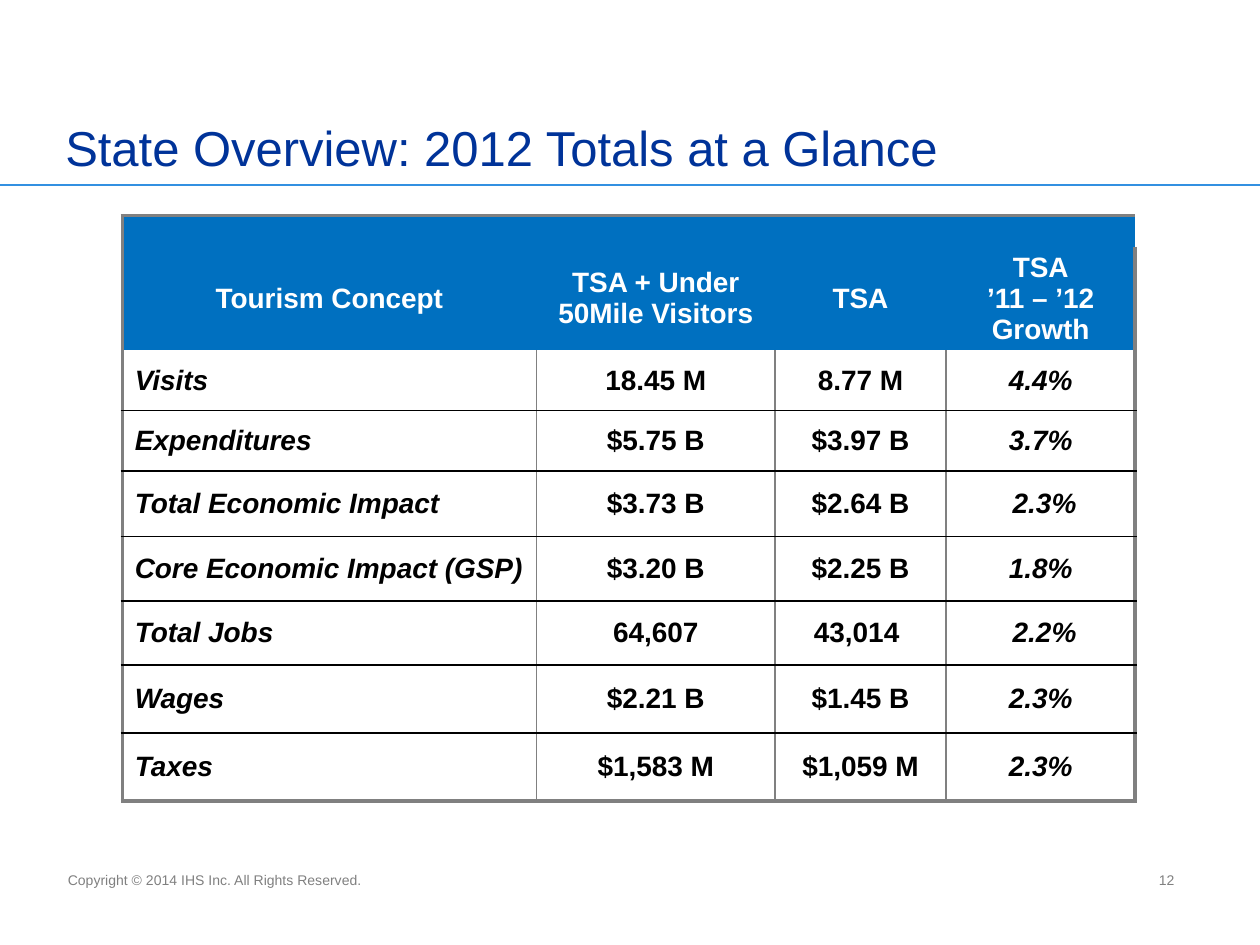
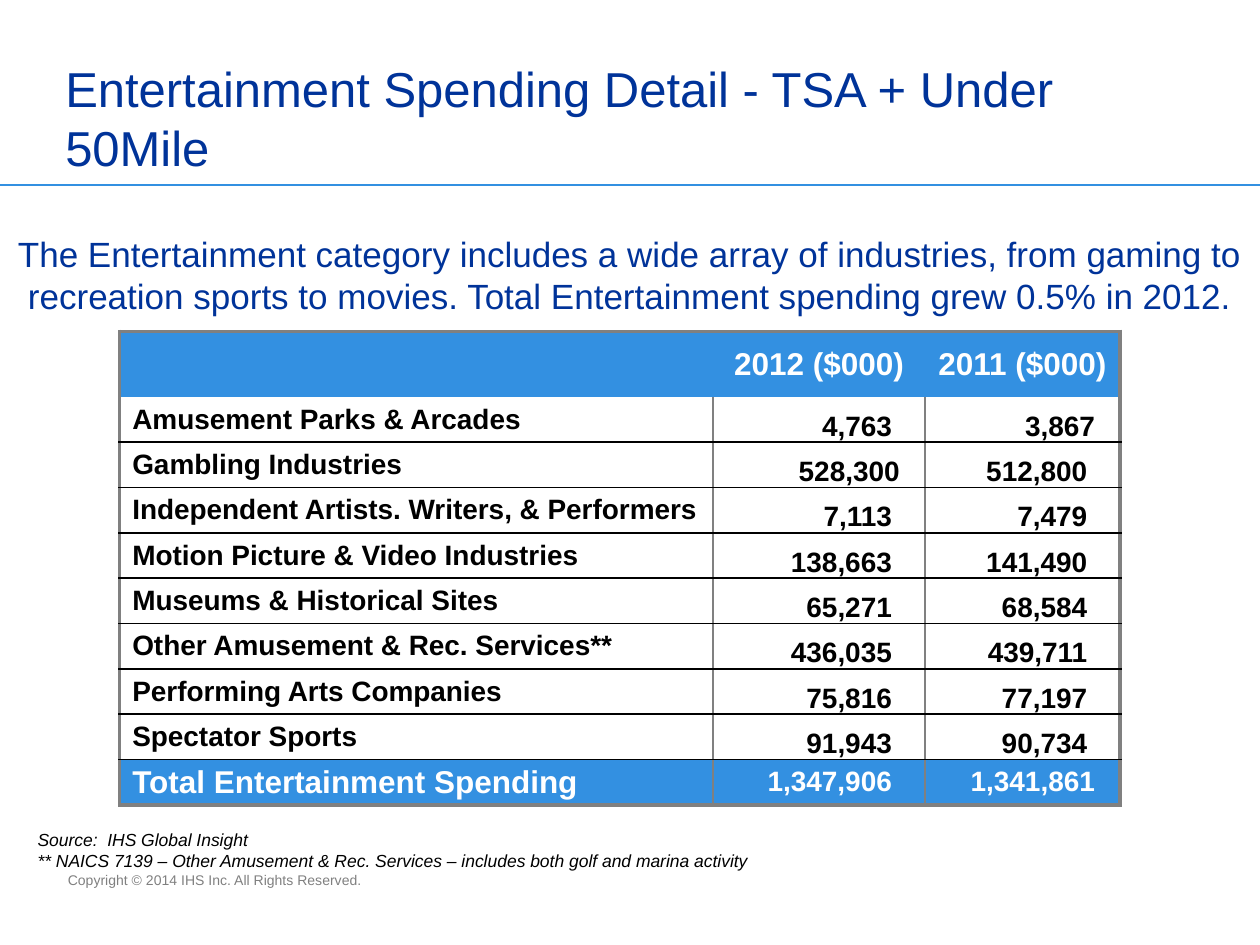
from dataclasses import dataclass, replace

from lxml.etree import SubElement
from pptx import Presentation
from pptx.dml.color import RGBColor
from pptx.enum.shapes import MSO_CONNECTOR
from pptx.enum.text import MSO_ANCHOR, PP_ALIGN
from pptx.oxml.ns import qn
from pptx.util import Inches, Pt


@dataclass(frozen=True)
class Theme:
    font: str = "Arial"
    navy: str = "003399"
    sky: str = "3390E1"
    blue: str = "0070C0"
    gray: str = "808080"
    black: str = "000000"
    white: str = "FFFFFF"
    title: float = 28
    lead: float = 20
    large: float = 18
    body: float = 16
    note: float = 10
    small: float = 8
    thin: float = 1
    thick: float = 2.25


THEME = Theme()


@dataclass(frozen=True)
class Look:
    size: float = THEME.body
    color: str = THEME.black
    bold: bool = False
    italic: bool = False
    align: PP_ALIGN = PP_ALIGN.LEFT
    anchor: MSO_ANCHOR = MSO_ANCHOR.TOP
    pads: tuple = (0.1, 0.05, 0.1, 0.05)
    fill: str = THEME.white


LABEL = Look(bold=True, anchor=MSO_ANCHOR.MIDDLE, pads=(0.1, 0.01, 0.1, 0.01))
VALUE = replace(LABEL, align=PP_ALIGN.CENTER)
AMOUNT = replace(LABEL, align=PP_ALIGN.RIGHT, anchor=MSO_ANCHOR.BOTTOM, pads=(0, 0, 0.2, 0))


class Deck:
    """Builds slides that share one theme, title style and footer."""

    def __init__(self, theme):
        self.theme = theme
        self.show = Presentation()
        self.show.slide_width, self.show.slide_height = Inches(10), Inches(7.5)
        self.slide = None

    def page(self, title):
        t = self.theme
        self.slide = self.show.slides.add_slide(self.show.slide_layouts[6])
        self.rule(1.47)
        self.text((0.44, 6.87, 3.57, 0.23), "Copyright © 2014 IHS Inc. All Rights Reserved.",
                  Look(t.small, t.gray))
        self.text((0.42, 0.21, 8.23, 1.24), title,
                  Look(t.title, t.navy, anchor=MSO_ANCHOR.BOTTOM))

    def rule(self, top):
        line = self.slide.shapes.add_connector(
            MSO_CONNECTOR.STRAIGHT, 0, Inches(top), Inches(10), Inches(top))
        line.line.color.rgb = RGBColor.from_string(self.theme.sky)
        line.line.width = Pt(self.theme.thin)
        SubElement(line._element.spPr, qn("a:effectLst"))

    def style(self, para, look):
        para.alignment = look.align
        font = para.font
        font.name, font.size = self.theme.font, Pt(look.size)
        font.bold, font.italic = look.bold, look.italic
        font.color.rgb = RGBColor.from_string(look.color)

    def text(self, box, words, look, wrap=True):
        frame = self.slide.shapes.add_textbox(*map(Inches, box)).text_frame
        frame.word_wrap, frame.vertical_anchor = wrap, look.anchor
        frame.margin_left, frame.margin_top, frame.margin_right, frame.margin_bottom = map(
            Inches, look.pads)
        frame.text = words
        for para in frame.paragraphs:
            self.style(para, look)

    def edge(self, cell, side, color, width):
        line = SubElement(cell._tc.get_or_add_tcPr(), qn(f"a:ln{side}"), w=str(Pt(width)))
        if color:
            fill = SubElement(line, qn("a:solidFill"))
            SubElement(fill, qn("a:srgbClr"), val=color)
        else:
            SubElement(line, qn("a:noFill"))

    def frame(self, cell, row, col, last, heads):
        t = self.theme
        outer, clear = (t.gray, t.thick), (None, t.thin)
        side = clear if row < heads else (t.gray, t.thin)
        level = (t.black, t.thin)
        self.edge(cell, "L", *(outer if col == 0 else side))
        self.edge(cell, "R", *(outer if col == last[1] else side))
        self.edge(cell, "T", *(outer if row == 0 else clear if row <= heads else level))
        self.edge(cell, "B", *(outer if row == last[0] else clear if row < heads else level))

    def cell(self, cell, words, look):
        cell.vertical_anchor = look.anchor
        cell.margin_left, cell.margin_top, cell.margin_right, cell.margin_bottom = map(
            Inches, look.pads)
        para = cell.text_frame.paragraphs[0]
        para.text = words
        self.style(para, look)
        if not words:
            SubElement(para._p, qn("a:endParaRPr"), sz=str(int(look.size * 100)))
        cell.fill.solid()
        cell.fill.fore_color.rgb = RGBColor.from_string(look.fill)

    def table(self, spot, wide, high, data, heads, pick):
        box = (*spot, sum(wide), sum(high))
        grid = self.slide.shapes.add_table(len(high), len(wide), *map(Inches, box)).table
        for col, width in zip(grid.columns, wide):
            col.width = Inches(width)
        for row, height in zip(grid.rows, high):
            row.height = Inches(height)
        last = len(high) - 1, len(wide) - 1
        for r, line in enumerate(data):
            for c, words in enumerate(line):
                cell = grid.cell(r, c)
                self.frame(cell, r, c, last, heads)
                self.cell(cell, words, pick(r, c))
        return grid


TOTALS = [
    ("", "", "", ""),
    ("Tourism Concept", "TSA + Under 50Mile Visitors", "TSA", "TSA\n’11 – ’12 Growth"),
    ("Visits", "18.45 M", "8.77 M", "4.4%"),
    ("Expenditures", "$5.75 B", "$3.97 B", "3.7%"),
    ("Total Economic Impact", "$3.73 B", "$2.64 B", " 2.3%"),
    ("Core Economic Impact (GSP)", "$3.20 B", "$2.25 B", "1.8%"),
    ("Total Jobs", "64,607", "43,014 ", " 2.2%"),
    ("Wages", "$2.21 B", "$1.45 B", "2.3%"),
    ("Taxes", "$1,583 M", "$1,059 M", "2.3%"),
]

SPENDING = [
    ("", "2012 ($000)", "2011 ($000)"),
    ("Amusement Parks & Arcades", "4,763 ", "3,867"),
    ("Gambling Industries", "528,300", "512,800 "),
    ("Independent Artists. Writers, & Performers", "7,113 ", "7,479 "),
    ("Motion Picture & Video Industries", "138,663 ", "141,490 "),
    ("Museums & Historical Sites", "65,271 ", "68,584 "),
    ("Other Amusement & Rec. Services**", "436,035 ", "439,711 "),
    ("Performing Arts Companies", "75,816 ", "77,197 "),
    ("Spectator Sports", "91,943 ", "90,734 "),
    ("Total Entertainment Spending", "1,347,906 ", "1,341,861"),
]


def total_look(row, col):
    if row < 2:
        size = THEME.note if row == 0 else THEME.body
        return replace(VALUE, size=size, color=THEME.white, fill=THEME.blue)
    return replace(VALUE if col else LABEL, italic=col in (0, 3))


def spend_look(row, col):
    band = dict(color=THEME.white, fill=THEME.sky)
    if row == 0:
        return replace(VALUE, size=THEME.large, **band)
    if row < len(SPENDING) - 1:
        return AMOUNT if col else LABEL
    if col:
        return replace(AMOUNT, anchor=MSO_ANCHOR.MIDDLE, **band)
    return replace(LABEL, size=THEME.large, **band)


def main():
    deck = Deck(THEME)

    deck.page("State Overview: 2012 Totals at a Glance")
    deck.text((8.42, 6.77, 1, 0.33), "12",
              Look(THEME.small, THEME.gray, align=PP_ALIGN.RIGHT, anchor=MSO_ANCHOR.BOTTOM))
    grid = deck.table((0.97, 1.71), (3.29, 1.89, 1.36, 1.5),
                      (0.25, 0.76, 0.48, 0.48, 0.52, 0.51, 0.51, 0.54, 0.54),
                      TOTALS, 2, total_look)
    grid.cell(0, 0).merge(grid.cell(0, 3))

    deck.page("Entertainment Spending Detail - TSA + Under 50Mile")
    deck.text((0, 1.41, 10, 1.54),
              "The Entertainment category includes a wide array of industries, from gaming to "
              "recreation sports to movies. Total Entertainment spending grew 0.5% in 2012.",
              Look(THEME.lead, THEME.navy, align=PP_ALIGN.CENTER, anchor=MSO_ANCHOR.MIDDLE))
    deck.table((0.95, 2.63), (4.71, 1.68, 1.55), (0.52, *[0.36] * 9),
               SPENDING, 1, spend_look)
    deck.text((0.2, 6.53, 5.83, 0.43),
              "Source:  IHS Global Insight\n"
              "** NAICS 7139 – Other Amusement & Rec. Services – "
              "includes both golf and marina activity",
              Look(THEME.note, italic=True), wrap=False)

    deck.show.save("out.pptx")


if __name__ == "__main__":
    main()
